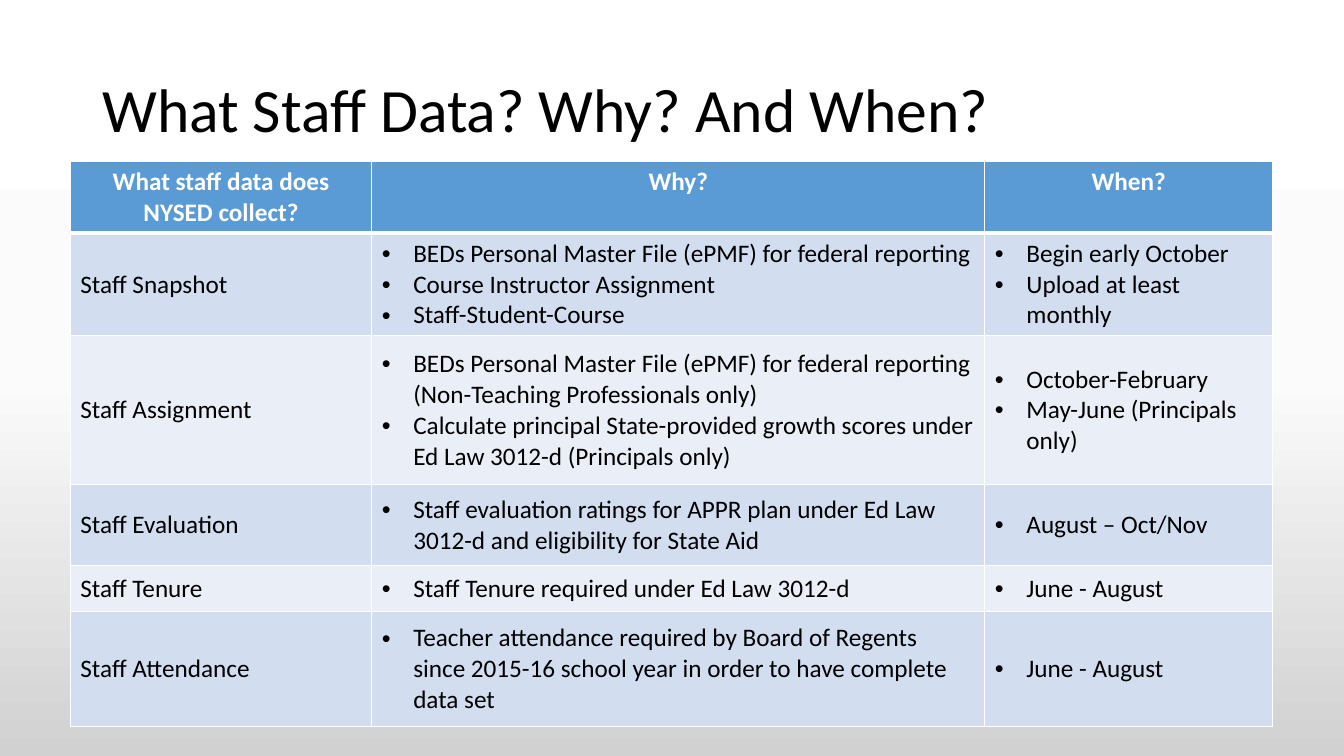
"""Build the staff data slide: a title above a what, why and when table."""
import copy

import lxml.etree
import pptx
import pptx.dml.color
import pptx.enum.text
import pptx.oxml.ns
import pptx.util

PX = 9525
ALIGN = pptx.enum.text.PP_ALIGN
ANCHOR = pptx.enum.text.MSO_ANCHOR
qn = pptx.oxml.ns.qn

THEME = {
    "font": "Calibri",
    "title_size": 44,
    "table_size": 18,
    "text": "000000",
    "header_text": "FFFFFF",
    "header": "5B9BD5",
    "bands": ["D2DEEF", "EAEFF7"],
    "border": "FFFFFF",
    "background": [(0, "FFFFFF"), (0.5, "FBFBFB"), (1, "D1D1D1")],
}

COLUMN_WIDTHS = [287, 584, 274]
ROW_HEIGHTS = [67, 97, 142, 77, 44, 109]
HEADINGS = ["What staff data does NYSED collect?", "Why?", "When?"]
STAFF_DATA = [
    ("Staff Snapshot",
     ["BEDs Personal Master File (ePMF) for federal reporting",
      "Course Instructor Assignment",
      "Staff-Student-Course"],
     ["Begin early October", "Upload at least monthly"]),
    ("Staff Assignment",
     ["BEDs Personal Master File (ePMF) for federal reporting (Non-Teaching Professionals only)",
      "Calculate principal State-provided growth scores under Ed Law 3012-d (Principals only)"],
     ["October-February", "May-June (Principals only)"]),
    ("Staff Evaluation",
     ["Staff evaluation ratings for APPR plan under Ed Law 3012-d and eligibility for State Aid"],
     ["August – Oct/Nov"]),
    ("Staff Tenure",
     ["Staff Tenure required under Ed Law 3012-d"],
     ["June - August"]),
    ("Staff Attendance",
     ["Teacher attendance required by Board of Regents since 2015-16 school year "
      "in order to have complete data set"],
     ["June - August"]),
]


def write_text(text_frame, lines, size, color=THEME["text"], bold=False,
               align=ALIGN.LEFT, spacing=1.0, bullet=False):
    text_frame.word_wrap = True
    for index, line in enumerate(lines):
        paragraph = text_frame.add_paragraph() if index else text_frame.paragraphs[0]
        paragraph.alignment = align
        paragraph.line_spacing = spacing
        run = paragraph.add_run()
        run.text = line
        run.font.name = THEME["font"]
        run.font.size = pptx.util.Pt(size)
        run.font.bold = bold
        run.font.color.rgb = pptx.dml.color.RGBColor.from_string(color)
        if bullet:
            properties = paragraph._p.get_or_add_pPr()
            properties.set("marL", str(30 * PX))
            properties.set("indent", str(-30 * PX))
            lxml.etree.SubElement(properties, qn("a:buFont")).set("typeface", "Arial")
            lxml.etree.SubElement(properties, qn("a:buChar")).set("char", "•")


def style_cell(cell, fill, top=1, bottom=1):
    properties = cell._tc.get_or_add_tcPr()
    for side, width in (("L", 1), ("R", 1), ("T", top), ("B", bottom)):
        line = lxml.etree.SubElement(properties, qn("a:ln" + side))
        line.set("w", str(pptx.util.Pt(width)))
        solid = lxml.etree.SubElement(line, qn("a:solidFill"))
        lxml.etree.SubElement(solid, qn("a:srgbClr")).set("val", THEME["border"])
    cell.fill.solid()
    cell.fill.fore_color.rgb = pptx.dml.color.RGBColor.from_string(fill)


presentation = pptx.Presentation()
presentation.slide_width = 1280 * PX
presentation.slide_height = 720 * PX
slide = presentation.slides.add_slide(presentation.slide_layouts[5])

background = slide.background.fill
background.gradient()
background.gradient_angle = 270
stop_list = slide._element.find(".//" + qn("a:gsLst"))
stop_list.insert(1, copy.deepcopy(stop_list[0]))
for stop, (position, color) in zip(background.gradient_stops, THEME["background"]):
    stop.position = position
    stop.color.rgb = pptx.dml.color.RGBColor.from_string(color)

title = slide.shapes.title
title.left, title.top, title.width, title.height = [n * PX for n in (88, 38, 1104, 139)]
title.text_frame.vertical_anchor = ANCHOR.MIDDLE
write_text(title.text_frame, ["What Staff Data? Why? And When?"],
           size=THEME["title_size"], spacing=0.9)

table = slide.shapes.add_table(
    len(ROW_HEIGHTS), len(COLUMN_WIDTHS), 67 * PX, 154 * PX,
    sum(COLUMN_WIDTHS) * PX, sum(ROW_HEIGHTS) * PX).table
for column, width in zip(table.columns, COLUMN_WIDTHS):
    column.width = width * PX
for row, height in zip(table.rows, ROW_HEIGHTS):
    row.height = height * PX

for cell, heading in zip(table.rows[0].cells, HEADINGS):
    style_cell(cell, THEME["header"], bottom=3)
    write_text(cell.text_frame, [heading], size=THEME["table_size"],
               color=THEME["header_text"], bold=True, align=ALIGN.CENTER)

for row_index, (name, reasons, dates) in enumerate(STAFF_DATA):
    cells = table.rows[row_index + 1].cells
    for column_index, (cell, lines) in enumerate(zip(cells, ([name], reasons, dates))):
        style_cell(cell, THEME["bands"][row_index % 2], top=1 if row_index else 3)
        cell.vertical_anchor = ANCHOR.MIDDLE
        write_text(cell.text_frame, lines, size=THEME["table_size"],
                   bullet=column_index > 0)

presentation.save("out.pptx")
